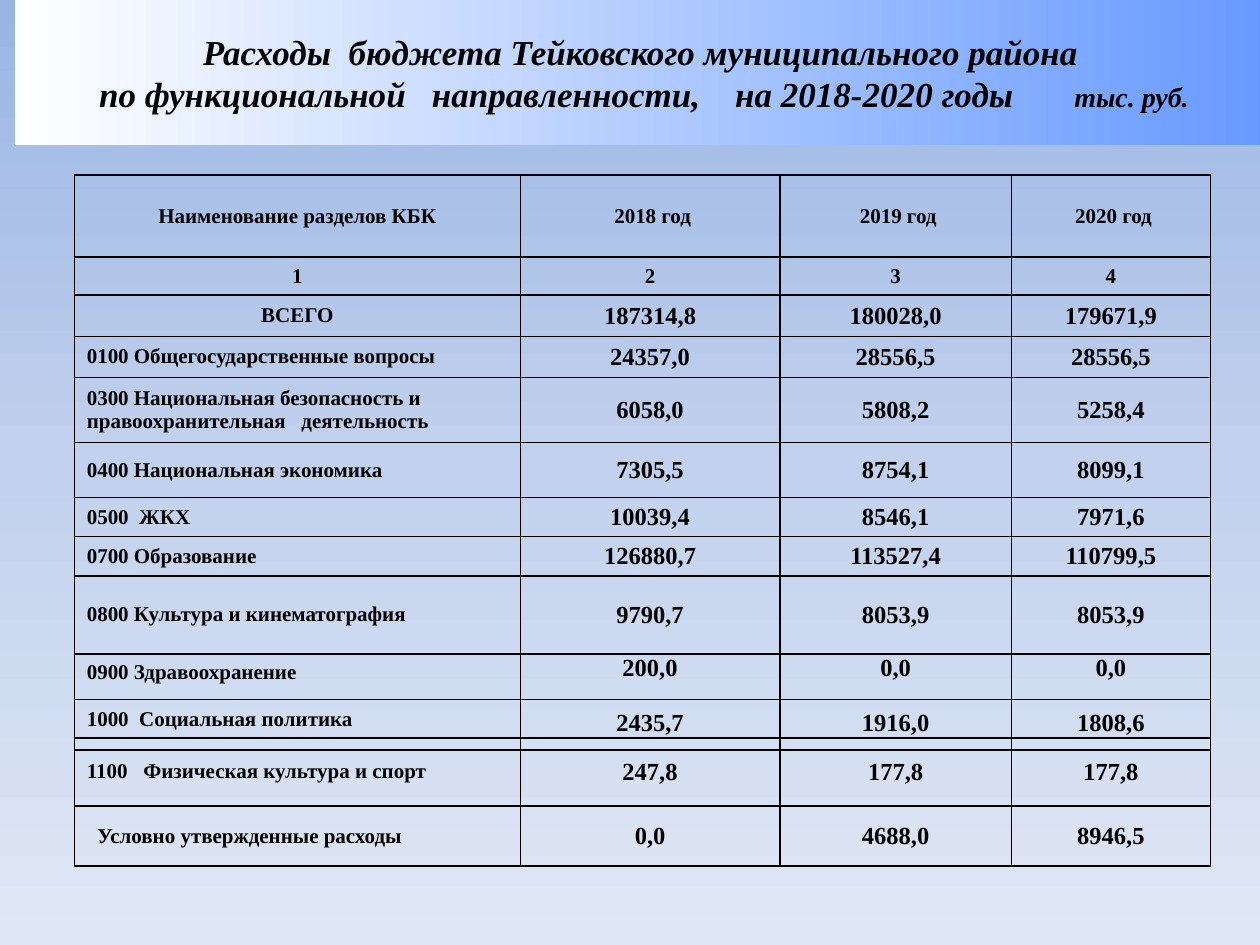
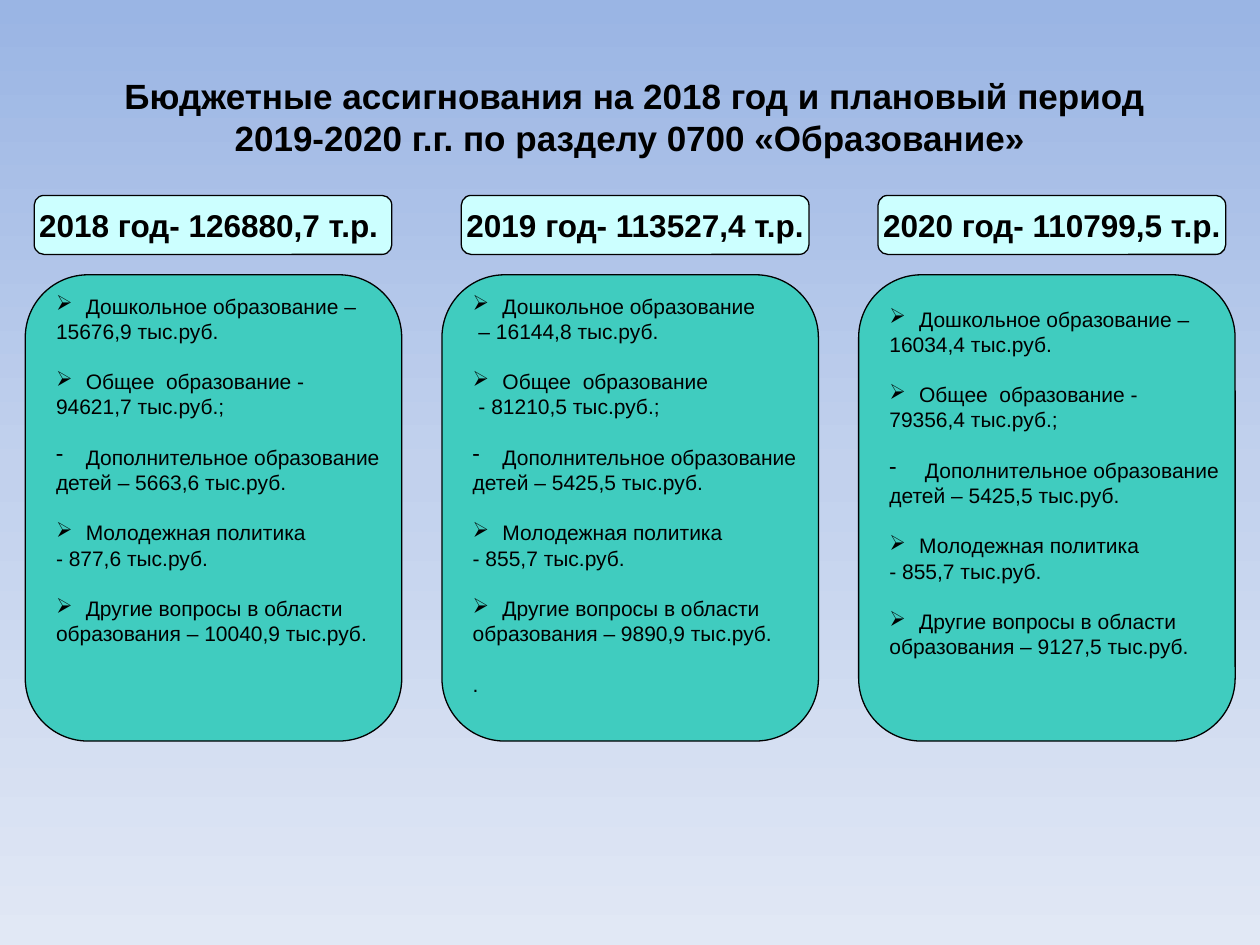
from dataclasses import dataclass

from lxml import etree
from pptx import Presentation
from pptx.dml.color import RGBColor
from pptx.enum.shapes import MSO_SHAPE
from pptx.enum.text import MSO_ANCHOR, PP_ALIGN
from pptx.oxml.ns import qn
from pptx.util import Cm, Pt

RECT, ROUND = MSO_SHAPE.RECTANGLE, MSO_SHAPE.ROUNDED_RECTANGLE
LEFT, MID = PP_ALIGN.LEFT, PP_ALIGN.CENTER
TOP, CENTRE = MSO_ANCHOR.TOP, MSO_ANCHOR.MIDDLE


@dataclass(frozen=True)
class Theme:
    ink: str = "000000"
    sky: tuple = ((0, "9AB5E4"), (50, "C2D1ED"), (100, "E1E8F5"))
    band: tuple = ((0, "FFFFFF"), (100, "6699FF"))
    card: str = "40CCBF"
    label: str = "CCFFFF"
    serif: str = "Times New Roman"
    sans: str = "Arial"
    title: int = 20
    head: int = 18
    unit: int = 16
    value: int = 14
    body: int = 12


T = Theme()


def write(frame, text, size=T.body, face=T.sans, bold=False, italic=False,
          align=LEFT, lead=None, gap=0, mark=None, join=False):
    """Add a paragraph, or with join a further run to the last one."""
    para = frame.paragraphs[-1]
    if para.runs and not join:
        para = frame.add_paragraph()
    if not join:
        para.alignment = align
        para.space_before = Pt(gap)
        if lead:
            para.line_spacing = Pt(lead * size)
    if mark:
        props = para._p.get_or_add_pPr()
        props.set("marL", str(Cm(0.6)))
        props.set("indent", str(-Cm(0.6)))
        etree.SubElement(props, qn("a:buChar")).set("char", mark)
    run = para.add_run()
    run.text = text
    font = run.font
    font.size, font.name, font.bold, font.italic = Pt(size), face, bold, italic
    font.color.rgb = RGBColor.from_string(T.ink)
    return para


def shade(owner, fill, stops, angle):
    """Give the fill of owner a linear gradient with any number of stops."""
    fill.gradient()
    fill.gradient_angle = angle
    items = next(owner.element.iter(qn("a:gsLst")))
    for old in list(items):
        items.remove(old)
    for place, tone in stops:
        stop = etree.SubElement(items, qn("a:gs"), pos=str(place * 1000))
        etree.SubElement(stop, qn("a:srgbClr"), val=tone)


deck = Presentation()
deck.slide_width, deck.slide_height = Cm(25.4), Cm(19.05)
master = deck.slide_master
shade(master, master.background.fill, T.sky, 270)
blank = deck.slide_layouts[6]

# Slide 1: spending table
slide = deck.slides.add_slide(blank)
cols = (8.99, 5.23, 4.67, 4.01)
rows = (
    (1.65, "Наименование разделов КБК", " 2018 год", " 2019 год", " 2020 год"),
    (0.77, "1", "2", "3", "4"),
    (0.83, "ВСЕГО", "187314,8", "180028,0", "179671,9"),
    (0.83, "0100 Общегосударственные вопросы", "24357,0", "28556,5", "28556,5"),
    (1.31, "0300 Национальная безопасность и правоохранительная   деятельность",
     "6058,0", "5808,2", "5258,4"),
    (1.11, "0400 Национальная экономика", "7305,5", "8754,1", "8099,1"),
    (0.79, "0500  ЖКХ", "10039,4", "8546,1", "7971,6"),
    (0.79, "0700 Образование", "126880,7", "113527,4", "110799,5"),
    (1.57, "0800 Культура и кинематография", "9790,7", "8053,9", "8053,9"),
    (1.94, "0900 Здравоохранение\n1000  Социальная политика",
     "200,0\n2435,7", "0,0\n1916,0", "0,0\n1808,6"),
    (1.13, "1100   Физическая культура и спорт", "247,8", "177,8", "177,8"),
    (1.21, "  Условно утвержденные расходы", "0,0", "4688,0", "8946,5"),
)
heads, raised = 2, (9, 10)
wide = sum(cols)
high = sum(row[0] for row in rows)
grid = slide.shapes.add_table(
    len(rows), len(cols), Cm(1.5), Cm(3.53), Cm(wide), Cm(high)).table
for col, width in zip(grid.columns, cols):
    col.width = Cm(width)
for r, (height, *texts) in enumerate(rows):
    grid.rows[r].height = Cm(height)
    for c, text in enumerate(texts):
        cell = grid.cell(r, c)
        cell.vertical_anchor = CENTRE
        side, edge = (0.2, 0) if c else (0.25, 0.13)
        cell.margin_left = cell.margin_right = Cm(side)
        cell.margin_top = Cm(edge)
        cell.margin_bottom = Cm(edge + 0.25 * (r in raised))
        size = T.value if c and r >= heads else T.body
        for n, line in enumerate(text.split("\n")):
            write(cell.text_frame, line, size, T.serif, bold=True,
                  align=MID if c or r <= heads else LEFT, gap=n * 1.11 * size)

band = slide.shapes.add_shape(RECT, Cm(0.3), 0, Cm(25.4), Cm(2.92))
band.shadow.inherit = False
band.line.fill.background()
shade(band, band.fill, T.band, 0)
frame = band.text_frame
frame.word_wrap, frame.vertical_anchor = True, CENTRE
frame.margin_left = frame.margin_right = Cm(1.7)
style = dict(face=T.serif, bold=True, italic=True, lead=1.2)
write(frame, "Расходы  бюджета Тейковского муниципального района ",
      T.title, align=MID, **style)
para = write(frame, "по функциональной   направленности,    на 2018-2020 годы\t",
             T.title, **style)
tabs = etree.SubElement(para._p.get_or_add_pPr(), qn("a:tabLst"))
etree.SubElement(tabs, qn("a:tab"), pos=str(Cm(19.66)), algn="l")
write(frame, "тыс. руб.", T.unit, join=True, **style)

strip = slide.shapes.add_table(
    1, 1, Cm(1.5), Cm(14.1), Cm(wide), Cm(0.74)).table
bare = strip.cell(0, 0)
bare.margin_left = bare.margin_right = bare.margin_top = bare.margin_bottom = 0

for table in (grid, strip):
    table.first_row = table.horz_banding = False
    for cell in table.iter_cells():
        props = cell._tc.get_or_add_tcPr()
        for side in "LRTB":
            line = etree.SubElement(props, qn("a:ln" + side), w=str(Pt(1)))
            ink = etree.SubElement(line, qn("a:solidFill"))
            etree.SubElement(ink, qn("a:srgbClr"), val=T.ink)
        cell.fill.background()

# Slide 2: education budget by year
slide = deck.slides.add_slide(blank)
frame = slide.shapes.add_textbox(
    Cm(1.27), Cm(0.76), Cm(22.86), Cm(3.18)).text_frame
frame.word_wrap, frame.vertical_anchor = True, CENTRE
write(frame, " Бюджетные ассигнования на 2018 год и плановый период "
      "2019-2020 г.г. по разделу 0700 «Образование»",
      T.title, bold=True, align=MID, lead=1.2)

marks = "➢➢-➢➢"
years = (
    (0.69, 7.21, 0, "2018 год- 126880,7 т.р. ", (
        ("Дошкольное образование –", "15676,9 тыс.руб."),
        ("Общее  образование -", "94621,7 тыс.руб.;"),
        ("Дополнительное образование", "детей – 5663,6 тыс.руб."),
        ("Молодежная политика", "- 877,6 тыс.руб."),
        ("Другие вопросы в области", "образования – 10040,9 тыс.руб."))),
    (9.3, 7.01, 0, "2019 год- 113527,4 т.р.", (
        ("Дошкольное образование", " – 16144,8 тыс.руб."),
        ("Общее  образование", " - 81210,5 тыс.руб.;"),
        ("Дополнительное образование", "детей – 5425,5 тыс.руб."),
        ("Молодежная политика", "- 855,7 тыс.руб."),
        ("Другие вопросы в области", "образования – 9890,9 тыс.руб."))),
    (17.7, 7.01, 0.26, "2020 год- 110799,5 т.р.", (
        ("Дошкольное образование –", "16034,4 тыс.руб."),
        ("Общее  образование -", "79356,4 тыс.руб.;"),
        (" Дополнительное образование", "детей – 5425,5 тыс.руб."),
        ("Молодежная политика", "- 855,7 тыс.руб."),
        ("Другие вопросы в области", "образования – 9127,5 тыс.руб."))),
)
space = 1.2 * T.body
for n, (left, width, drop, total, topics) in enumerate(years):
    frames = []
    for tone, x, y, w, h in ((T.label, left, 3.94, width, 1.19),
                             (T.card, 0.51 + 8.4 * n, 5.54, 7.59, 9.4)):
        box = slide.shapes.add_shape(ROUND, Cm(x), Cm(y), Cm(w), Cm(h))
        box.shadow.inherit = False
        box.fill.solid()
        box.fill.fore_color.rgb = RGBColor.from_string(tone)
        box.line.color.rgb = RGBColor.from_string(T.ink)
        box.line.width = Pt(0.75)
        box.text_frame.word_wrap = False
        frames.append(box.text_frame)
    label, card = frames
    label.vertical_anchor = CENTRE
    write(label, total, T.head, bold=True, align=MID)
    card.vertical_anchor, card.margin_top = TOP, Cm(drop)
    for k, (mark, (topic, money)) in enumerate(zip(marks, topics)):
        write(card, topic, lead=1.2, gap=space if k else 0, mark=mark)
        write(card, money, lead=1.2)
    if n == 1:
        write(card, ".", lead=1.2, gap=space)

deck.save("out.pptx")
